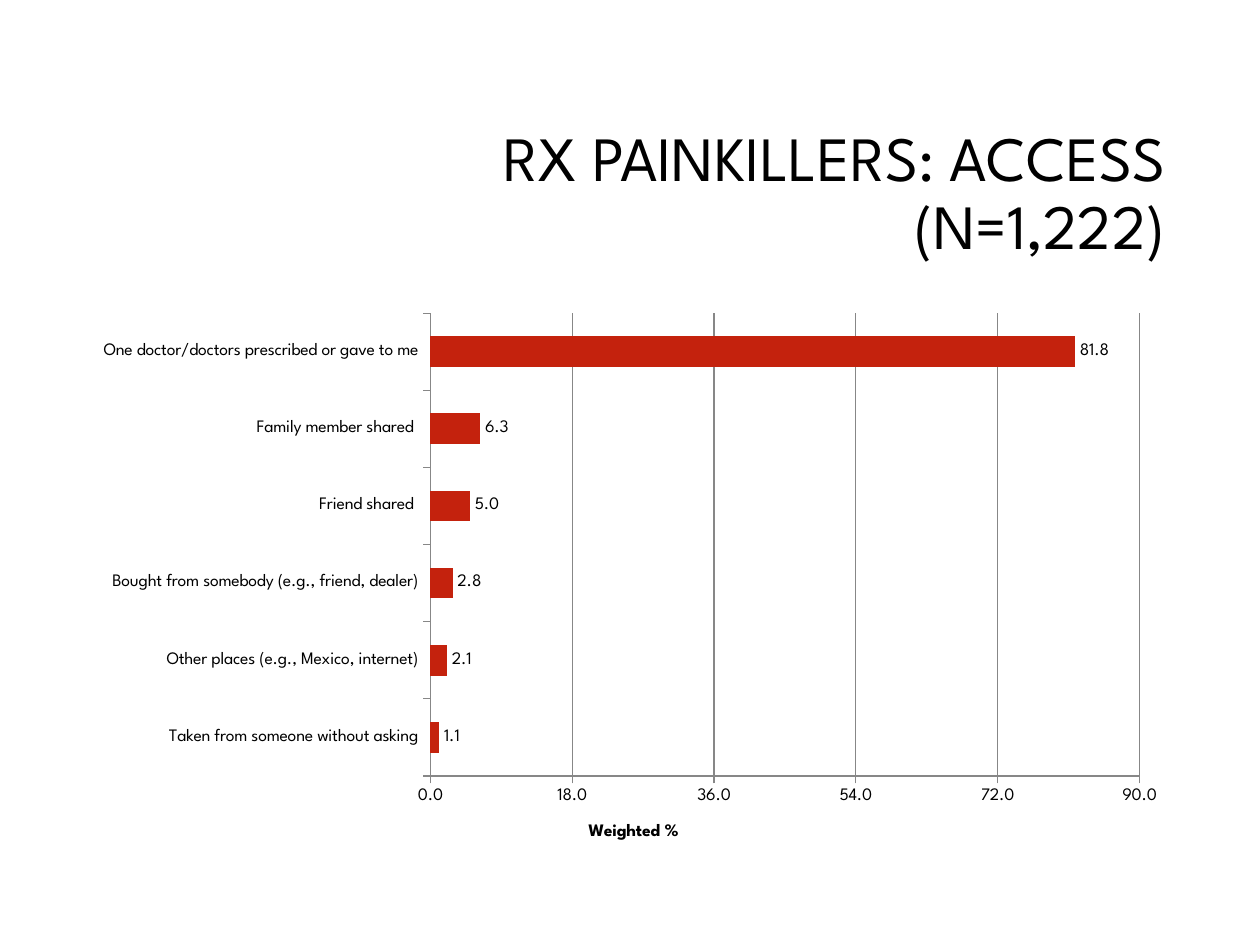
import lxml.etree
import pptx
import pptx.chart.data
import pptx.dml.color
import pptx.enum.chart
import pptx.enum.text
import pptx.oxml.ns
import pptx.util

SCALE = 914400 / 126
FONT = "League Spartan"
COLORS = {"text": "000000", "bar": "C4220D", "grid": "878787"}
CHART_BOX = (82, 302, 1096, 561)
PLOT_BOX = (430, 313, 709, 463)
AXIS_TITLE_CORNER = (585, 820)
ACCESS = [
    ("Taken from someone without asking", 1.1),
    ("Other places (e.g., Mexico, internet)", 2.1),
    ("Bought from somebody (e.g., friend, dealer)", 2.8),
    ("Friend shared ", 5.0),
    ("Family member shared ", 6.3),
    ("One doctor/doctors prescribed or gave to me", 81.8),
]


def px(length):
    """Turn pixels into EMU."""
    return pptx.util.Emu(round(length * SCALE))


def color(name):
    """Look up a named colour."""
    return pptx.dml.color.RGBColor.from_string(COLORS[name])


def apply(target, **values):
    """Set attributes from a dict of format values."""
    for name, value in values.items():
        setattr(target, name, value)


def style_font(font, size, **values):
    """Give a font the slide's face and text colour."""
    apply(font, name=FONT, size=pptx.util.Pt(size), **values)
    font.color.rgb = color("text")


def style_line(line):
    """Draw a thin grey line."""
    line.color.rgb = color("grid")
    line.width = pptx.util.Pt(0.75)


def set_layout(parent, index, box, target=None):
    """Place a chart part at a pixel box inside the chart."""
    qn = pptx.oxml.ns.qn
    for old in parent.findall(qn("c:layout")):
        parent.remove(old)
    layout = lxml.etree.Element(qn("c:layout"))
    manual = lxml.etree.SubElement(layout, qn("c:manualLayout"))
    left, top, width, height = CHART_BOX
    fractions = [(box[0] - left) / width, (box[1] - top) / height]
    fractions += [side / whole for side, whole in zip(box[2:], (width, height))]
    settings = [("layoutTarget", target)] if target else []
    settings += [("xMode", "edge"), ("yMode", "edge")]
    settings += [(key, f"{part:.3f}") for key, part in zip("xywh", fractions)]
    for key, value in settings:
        lxml.etree.SubElement(manual, qn(f"c:{key}")).set("val", value)
    parent.insert(index, layout)


def add_title(page, text, box):
    """Fill and place the title placeholder."""
    title = page.shapes.title
    apply(title, **dict(zip(("left", "top", "width", "height"), map(px, box))))
    frame = title.text_frame
    apply(frame, text=text, word_wrap=True,
          auto_size=pptx.enum.text.MSO_AUTO_SIZE.NONE,
          vertical_anchor=pptx.enum.text.MSO_ANCHOR.MIDDLE)
    para = frame.paragraphs[0]
    apply(para, alignment=pptx.enum.text.PP_ALIGN.RIGHT, line_spacing=0.9)
    style_font(para.runs[0].font, 36)


def style_axes(chart):
    """Format both axes, the gridlines and the value axis title."""
    outside = pptx.enum.chart.XL_TICK_MARK.OUTSIDE
    for axis in (chart.category_axis, chart.value_axis):
        axis.major_tick_mark = outside
        style_line(axis.format.line)
    chart.category_axis.has_major_gridlines = False
    values = chart.value_axis
    apply(values, minimum_scale=0, maximum_scale=90, major_unit=18,
          has_major_gridlines=True, has_title=True)
    apply(values.tick_labels, number_format="0.0", number_format_is_linked=False)
    style_line(values.major_gridlines.format.line)
    frame = values.axis_title.text_frame
    frame.text = "Weighted %"
    style_font(frame.paragraphs[0].runs[0].font, 10, bold=True)
    set_layout(values.axis_title._element, 1, AXIS_TITLE_CORNER)


def add_bar_chart(page):
    """Add the bar chart of where painkillers came from."""
    data = pptx.chart.data.CategoryChartData(number_format="0.0")
    names, shares = zip(*ACCESS)
    data.categories = names
    data.add_series("Series 1", shares)
    kind = pptx.enum.chart.XL_CHART_TYPE.BAR_CLUSTERED
    chart = page.shapes.add_chart(kind, *map(px, CHART_BOX), data).chart
    apply(chart, has_legend=False, has_title=False)
    style_font(chart.font, 10)
    style_axes(chart)
    plot = chart.plots[0]
    apply(plot, gap_width=150, vary_by_categories=False, has_data_labels=True)
    apply(plot.data_labels, show_value=True, number_format="0.0",
          number_format_is_linked=False,
          position=pptx.enum.chart.XL_LABEL_POSITION.OUTSIDE_END)
    fill = plot.series[0].format.fill
    fill.solid()
    fill.fore_color.rgb = color("bar")
    set_layout(chart._chartSpace.chart.plotArea, 0, PLOT_BOX, "inner")


def main():
    """Build and save the slide."""
    deck = pptx.Presentation()
    apply(deck, slide_width=px(1260), slide_height=px(945))
    page = deck.slides.add_slide(deck.slide_layouts[5])
    add_title(page, "RX PAINKILLERS: ACCESS (N=1,222)", (300, 106, 878, 178))
    add_bar_chart(page)
    deck.save("out.pptx")


if __name__ == "__main__":
    main()
